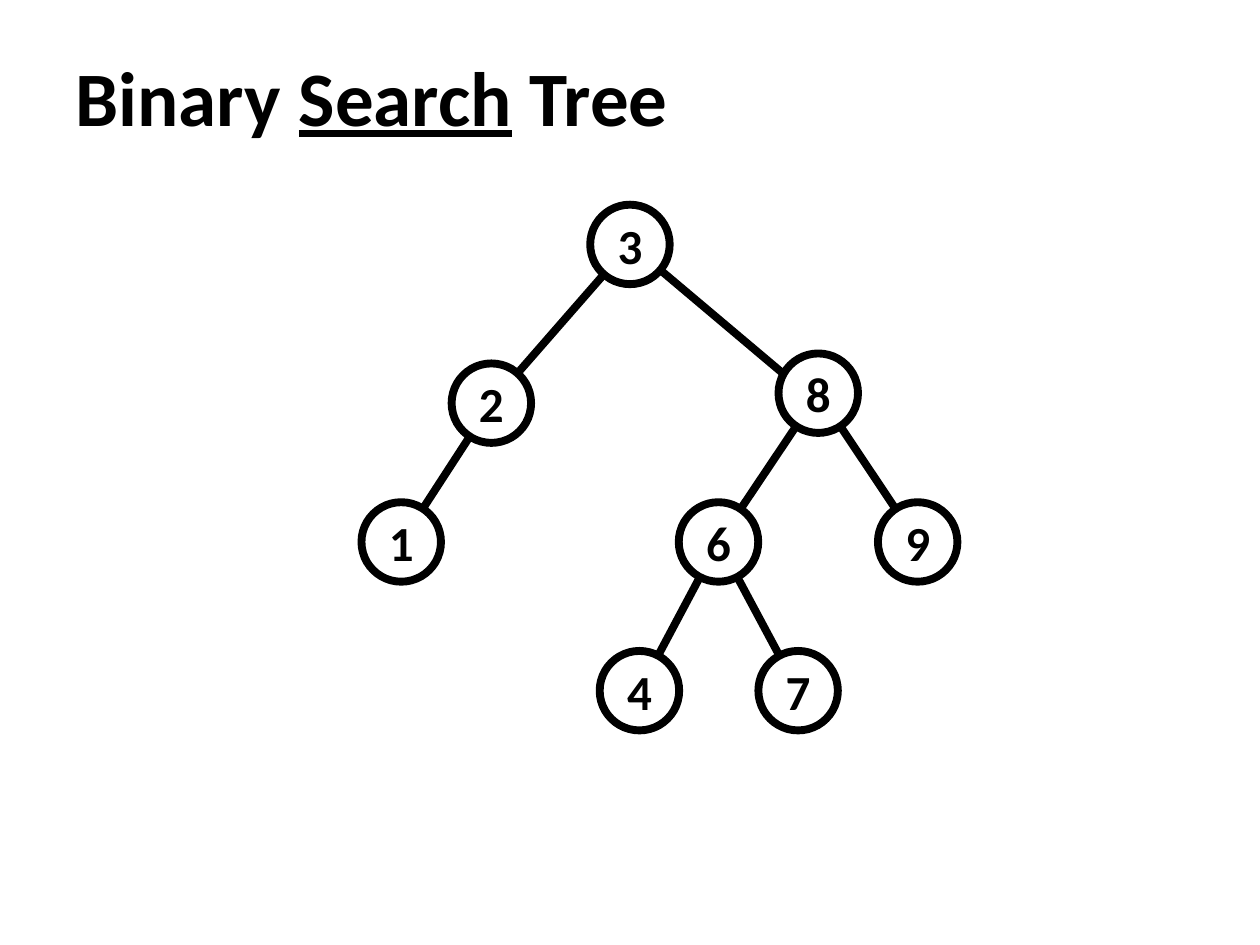
from lxml import etree
from pptx import Presentation
from pptx.dml.color import RGBColor
from pptx.enum import shapes, text
from pptx.oxml.ns import qn
from pptx.util import Pt

FONT = "Calibri"
INK = "000000"
PAPER = "FFFFFF"
STROKE = 4.5
DIAMETER = 45.4
ROW_STEP = 85

# value: (centre x, level, extra drop, parent, drop of the edge's end)
NODES = {
    "3": (153.4, 0, 0, None, 0),
    "2": (74.2, 1, 5.7, "3", 0),
    "8": (261, 1, 0, "3", 5.7),
    "6": (204, 2, 0, "8", 0),
    "9": (317.8, 2, 0, "8", 0),
    "4": (158.8, 3, 0, "6", 0),
    "7": (249.5, 3, 0, "6", 0),
    "1": (22.7, 2, 0, "2", 0),
}


def color(value):
    return RGBColor.from_string(value)


def style_span(span, size):
    span.font.name = FONT
    span.font.size = Pt(size)
    span.font.bold = True
    span.font.color.rgb = color(INK)


def style_line(line):
    line.color.rgb = color(INK)
    line.width = Pt(STROKE)


def add_title(page, left, top, width, height):
    title = page.shapes.title
    title.left, title.top = Pt(left), Pt(top)
    title.width, title.height = Pt(width), Pt(height)
    frame = title.text_frame
    frame.vertical_anchor = text.MSO_ANCHOR.MIDDLE
    para = frame.paragraphs[0]
    para.alignment = text.PP_ALIGN.LEFT
    for words in ("Binary ", "Search", " Tree"):
        span = para.add_run()
        span.text = words
        style_span(span, 44)
        span.font.underline = words == "Search"


def add_edge(page, start, end):
    edge = page.shapes.add_connector(
        shapes.MSO_CONNECTOR.STRAIGHT, *(Pt(length) for length in start + end))
    style_line(edge.line)
    etree.SubElement(edge._element.spPr, qn("a:effectLst"))


def add_node(group, value, center):
    x, y = center
    node = group.shapes.add_shape(
        shapes.MSO_SHAPE.OVAL, Pt(x - DIAMETER / 2), Pt(y - DIAMETER / 2),
        Pt(DIAMETER), Pt(DIAMETER))
    node.shadow.inherit = False
    node.fill.solid()
    node.fill.fore_color.rgb = color(PAPER)
    style_line(node.line)
    frame = node.text_frame
    frame.text = value
    frame.word_wrap = False
    frame.vertical_anchor = text.MSO_ANCHOR.MIDDLE
    para = frame.paragraphs[0]
    para.alignment = text.PP_ALIGN.CENTER
    style_span(para.runs[0], 28)


def add_tree(page, left, top):
    centers = {
        value: (left + x, top + DIAMETER / 2 + level * ROW_STEP + drop)
        for value, (x, level, drop, parent, end_drop) in NODES.items()
    }
    for value, (_, _, _, parent, end_drop) in NODES.items():
        if parent:
            x, y = centers[value]
            add_edge(page, centers[parent], (x, y + end_drop))
    group = page.shapes.add_group_shape()
    for value, center in centers.items():
        add_node(group, value, center)


def main():
    deck = Presentation()
    deck.slide_width, deck.slide_height = Pt(720), Pt(540)
    page = deck.slides.add_slide(deck.slide_layouts[5])
    page.background.fill.solid()
    page.background.fill.fore_color.rgb = color(PAPER)
    add_title(page, 36, 9.4, 648, 90)
    add_tree(page, 206.6, 117)
    deck.save("out.pptx")


if __name__ == "__main__":
    main()
